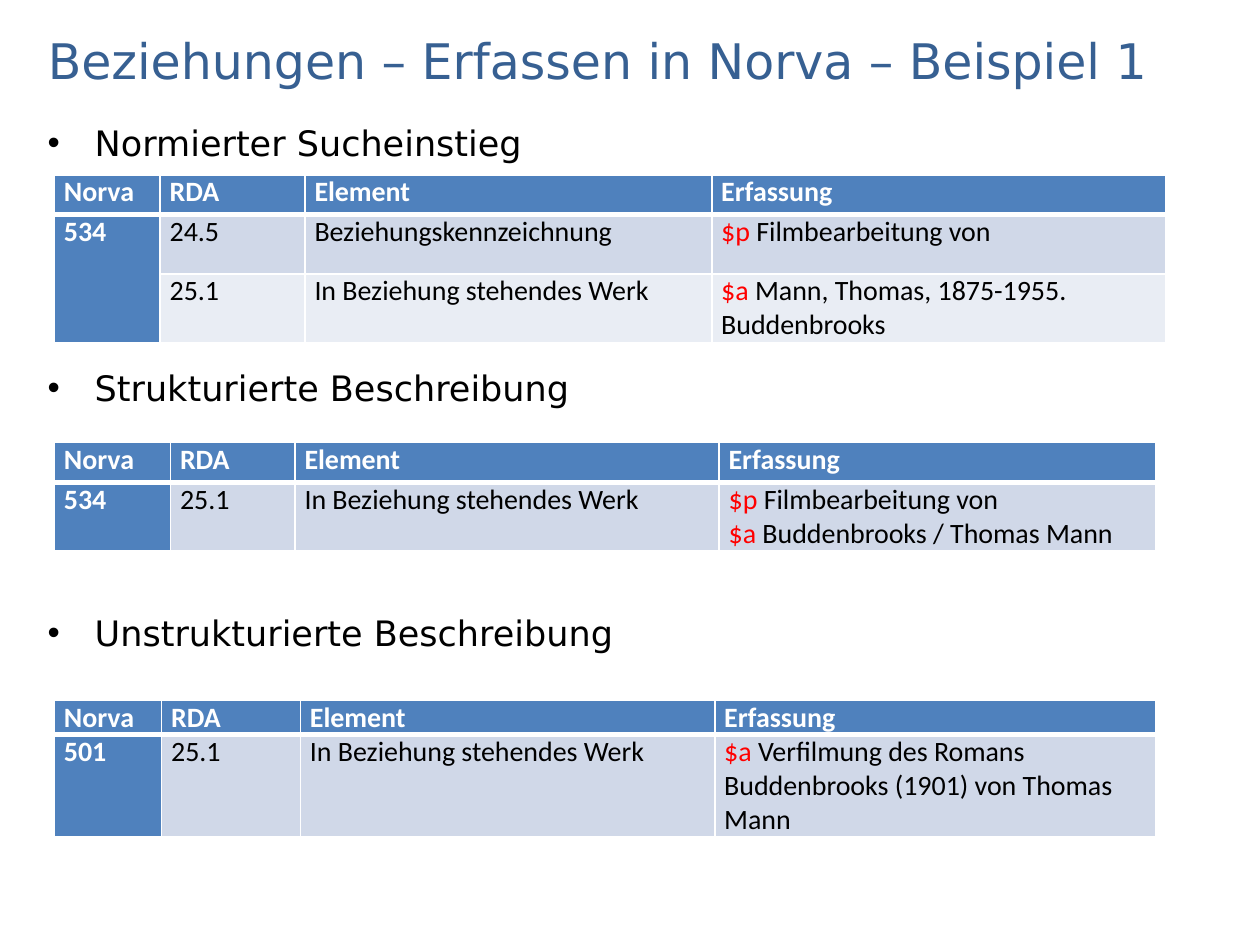
import pptx
import pptx.util
import pptx.dml.color
import pptx.enum.text
import pptx.oxml
import pptx.oxml.ns
import lxml.etree

Cm = pptx.util.Cm
Pt = pptx.util.Pt
COLORS = {
    "title": "376092",
    "text": "000000",
    "code": "FF0000",
    "white": "FFFFFF",
    "header": "4F81BD",
    "band": "D0D8E8",
    "light": "E9EDF4",
}


def write(para, text, font="DejaVu Sans", size=20, color="text", bold=False):
    for index, line in enumerate(text.split("\n")):
        if index:
            para.add_line_break()
        code, rest = (line[:2], line[2:]) if line.startswith("$") else ("", line)
        for part, shade in ((code, "code"), (rest, color)):
            if part:
                span = para.add_run()
                span.text = part
                span.font.name = font
                span.font.size = Pt(size)
                span.font.bold = bold
                span.font.color.rgb = pptx.dml.color.RGBColor.from_string(COLORS[shade])


def draw_borders(cell, **widths):
    properties = cell._tc.get_or_add_tcPr()
    for position, side in enumerate(("L", "R", "T", "B")):
        line = pptx.oxml.parse_xml(
            f'<a:ln{side} xmlns:a="{pptx.oxml.ns.nsuri("a")}" w="{Pt(widths.get(side, 1))}">'
            f'<a:solidFill><a:srgbClr val="{COLORS["white"]}"/></a:solidFill></a:ln{side}>'
        )
        properties.insert(position, line)


deck = pptx.Presentation()
deck.slide_width = Cm(25.4)
deck.slide_height = Cm(19.05)
page = deck.slides.add_slide(deck.slide_layouts[5])

title = page.shapes.title
title.left, title.top, title.width, title.height = Cm(0.71), Cm(0.49), Cm(24), Cm(1.42)
title.text_frame.vertical_anchor = pptx.enum.text.MSO_ANCHOR.MIDDLE
title.text_frame.paragraphs[0].alignment = pptx.enum.text.PP_ALIGN.LEFT
write(title.text_frame.paragraphs[0], "Beziehungen – Erfassen in Norva – Beispiel 1",
      size=28, color="title")

headings = page.shapes.add_textbox(Cm(0.71), Cm(2.32), Cm(24), Cm(15.19))
headings.text_frame.word_wrap = True
for index, heading in enumerate(("Normierter Sucheinstieg", "Strukturierte Beschreibung",
                                 "Unstrukturierte Beschreibung")):
    para = headings.text_frame.add_paragraph() if index else headings.text_frame.paragraphs[0]
    para.space_before = Pt(116 if index else 0)
    properties = para._p.get_or_add_pPr()
    properties.set("marL", str(Cm(0.95)))
    properties.set("indent", str(-Cm(0.95)))
    bullet_font = lxml.etree.SubElement(properties, pptx.oxml.ns.qn("a:buFont"))
    bullet_font.set("typeface", "Arial")
    bullet = lxml.etree.SubElement(properties, pptx.oxml.ns.qn("a:buChar"))
    bullet.set("char", "•")
    write(para, heading)

HEADER = ("Norva", "RDA", "Element", "Erfassung")
WORK = "In Beziehung stehendes Werk"
TABLES = (
    (3.53, (2.13, 2.92, 8.2, 9.16), (0.8, 1.19, 1.4), (
        ("534", "24.5", "Beziehungskennzeichnung", "$p Filmbearbeitung von"),
        ("", "25.1", WORK, "$a Mann, Thomas, 1875-1955. Buddenbrooks"))),
    (8.92, (2.34, 2.51, 8.55, 8.8), (0.81, 1.37), (
        ("534", "25.1", WORK, "$p Filmbearbeitung von\n$a Buddenbrooks / Thomas Mann"),)),
    (14.12, (2.16, 2.8, 8.35, 8.89), (0.69, 2.06), (
        ("501", "25.1", WORK,
         "$a Verfilmung des Romans Buddenbrooks (1901) von Thomas Mann"),)),
)
for top, widths, heights, entries in TABLES:
    frame = page.shapes.add_table(len(heights), len(widths), Cm(1.1), Cm(top),
                                  Cm(sum(widths)), Cm(sum(heights)))
    table = frame.table
    for column, width in zip(table.columns, widths):
        column.width = Cm(width)
    for row, height in zip(table.rows, heights):
        row.height = Cm(height)
    for row_index, texts in enumerate((HEADER, *entries)):
        for column_index, text in enumerate(texts):
            cell = table.cell(row_index, column_index)
            strong = row_index == 0 or column_index == 0
            fill = "header" if strong else ("light", "band")[row_index % 2]
            cell.margin_left = cell.margin_right = Cm(0.19)
            cell.margin_top = cell.margin_bottom = 0
            cell.fill.solid()
            cell.fill.fore_color.rgb = pptx.dml.color.RGBColor.from_string(COLORS[fill])
            draw_borders(cell, T=3 if row_index == 1 else 1, B=3 if row_index == 0 else 1)
            para = cell.text_frame.paragraphs[0]
            para.space_after = Pt(6)
            write(para, text, font="Calibri", size=16,
                  color="white" if strong else "text", bold=strong)
    if len(entries) > 1:
        table.cell(1, 0).merge(table.cell(len(entries), 0))

deck.save("out.pptx")
